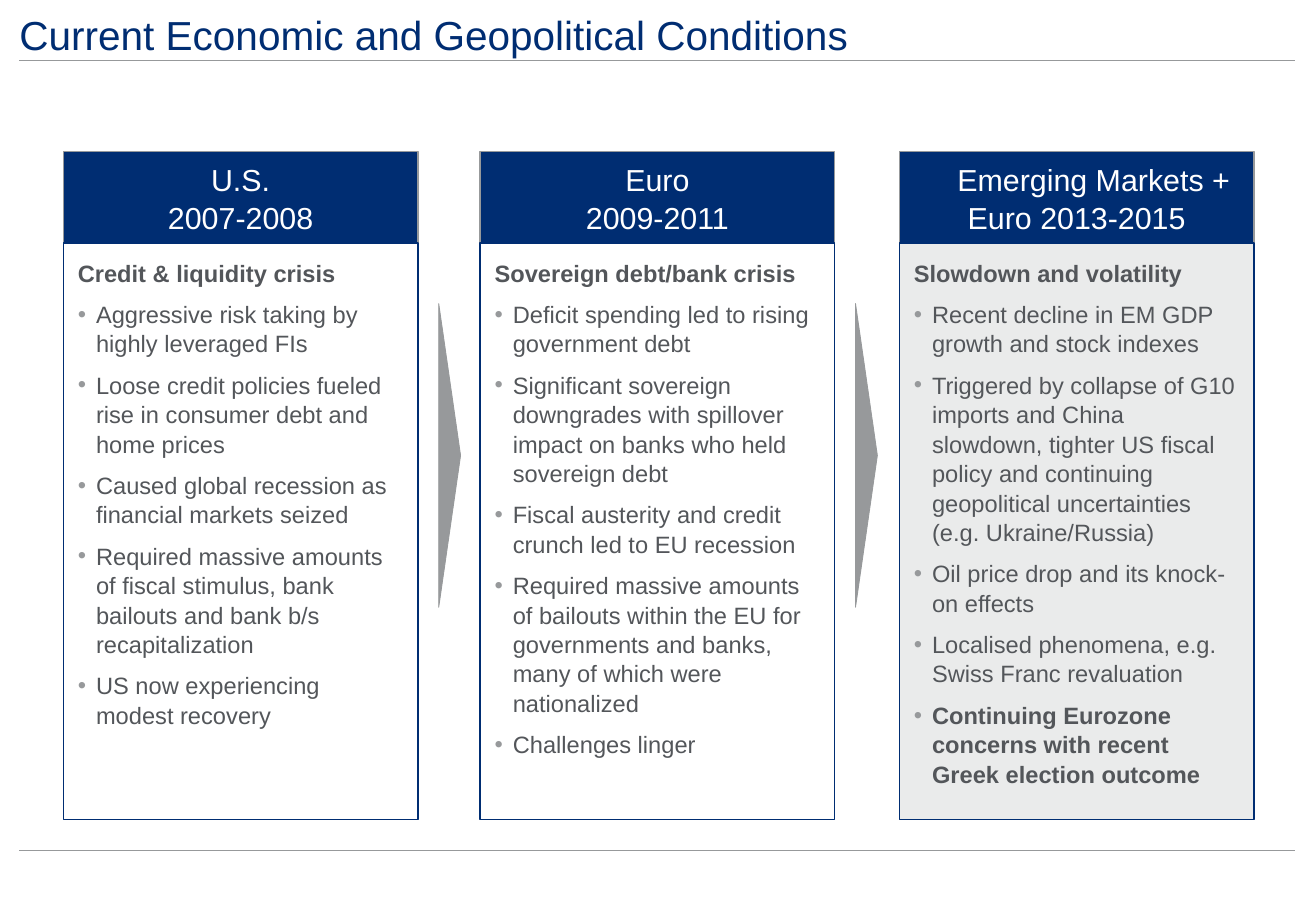
from lxml.etree import SubElement
from pptx import Presentation
from pptx.dml.color import RGBColor
from pptx.enum.shapes import MSO_CONNECTOR, MSO_SHAPE
from pptx.enum.text import MSO_ANCHOR, MSO_AUTO_SIZE, PP_ALIGN
from pptx.oxml.ns import qn
from pptx.util import Inches, Pt

NAVY, GRAY, TEXT, PALE, WHITE = "002D72", "97999B", "53565A", "EAEBEB", "FFFFFF"
COL_W, HEAD_H, BODY_H = 2.92, 0.75, 4.75
ARROW_W, ARROW_H, ARROW_GAP = 2.5, 0.18, 0.26

COLUMNS = [
    (0.52, ["U.S.", "2007-2008"], None, "Credit & liquidity crisis", [
        "Aggressive risk taking by highly leveraged FIs",
        "Loose credit policies fueled rise in consumer debt and home prices",
        "Caused global recession as financial markets seized",
        "Required massive amounts of fiscal stimulus, bank bailouts and bank b/s recapitalization",
        "US now experiencing modest recovery"]),
    (3.95, ["Euro", "2009-2011"], None, "Sovereign debt/bank crisis", [
        "Deficit spending led to rising government debt",
        "Significant sovereign downgrades with spillover impact on banks who held sovereign debt",
        "Fiscal austerity and credit crunch led to EU recession",
        "Required massive amounts of bailouts within the EU for governments and banks, "
        "many of which were nationalized",
        "Challenges linger"]),
    (7.4, ["Emerging Markets + Euro 2013-2015"], PALE, "Slowdown and volatility", [
        "Recent decline in EM GDP growth and stock indexes",
        "Triggered by collapse of G10 imports and China slowdown, tighter US fiscal policy "
        "and continuing geopolitical uncertainties (e.g. Ukraine/Russia)",
        "Oil price drop and its knock-on effects",
        "Localised phenomena, e.g. Swiss Franc revaluation",
        "Continuing Eurozone concerns with recent Greek election outcome"]),
]


def rgb(color):
    return RGBColor.from_string(color)


def style(p, size, color, bold=False):
    for r in p.runs:
        r.font.name = "Arial"
        r.font.size = Pt(size)
        r.font.color.rgb = rgb(color)
        r.font.bold = bold


def add_box(s, kind, x, y, w, h, fill, line, width=0.75):
    sp = s.shapes.add_shape(kind, Inches(x), Inches(y), Inches(w), Inches(h))
    sp.shadow.inherit = False
    if fill:
        sp.fill.solid()
        sp.fill.fore_color.rgb = rgb(fill)
    else:
        sp.fill.background()
    sp.line.color.rgb = rgb(line)
    sp.line.width = Pt(width)
    return sp


def set_frame(tf, anchor, inset):
    tf.word_wrap = True
    tf.auto_size = MSO_AUTO_SIZE.NONE
    tf.vertical_anchor = anchor
    tf.margin_left = tf.margin_right = tf.margin_top = tf.margin_bottom = Inches(inset)


def add_rule(s, x, y, w):
    line = s.shapes.add_connector(
        MSO_CONNECTOR.STRAIGHT, Inches(x), Inches(y), Inches(x + w), Inches(y))
    line.line.color.rgb = rgb(GRAY)
    line.line.width = Pt(0.5)
    SubElement(line._element.spPr, qn("a:effectLst"))


def add_title(s, x, y, w, h):
    sp = s.shapes.title
    sp.left, sp.top, sp.width, sp.height = Inches(x), Inches(y), Inches(w), Inches(h)
    tf = sp.text_frame
    tf.text = "Current Economic and Geopolitical Conditions"
    set_frame(tf, MSO_ANCHOR.TOP, 0)
    tf.paragraphs[0].alignment = PP_ALIGN.LEFT
    style(tf.paragraphs[0], 24, NAVY)


def add_header(s, x, y, w, h, lines):
    tf = add_box(s, MSO_SHAPE.RECTANGLE, x, y, w, h, NAVY, GRAY).text_frame
    set_frame(tf, MSO_ANCHOR.MIDDLE, 0.12)
    tf.text = "\n".join(lines)
    for p in tf.paragraphs:
        p.alignment = PP_ALIGN.CENTER
        p.line_spacing = 1.04
        style(p, 18, WHITE)
    if len(lines) == 1:
        tf.paragraphs[0]._p.get_or_add_pPr().set("indent", str(Inches(0.28)))


def add_bullet(p):
    pPr = p._p.get_or_add_pPr()
    pPr.set("marL", str(Inches(0.15)))
    pPr.set("indent", str(-Inches(0.15)))
    SubElement(SubElement(pPr, qn("a:buClr")), qn("a:srgbClr"), val=GRAY)
    SubElement(pPr, qn("a:buFont"), typeface="Arial")
    SubElement(pPr, qn("a:buChar"), char="•")


def add_body(s, x, y, w, h, fill, heading, points):
    tf = add_box(s, MSO_SHAPE.RECTANGLE, x, y, w, h, fill, NAVY).text_frame
    set_frame(tf, MSO_ANCHOR.TOP, 0.12)
    tf.text = "\n".join([heading] + points)
    for i, p in enumerate(tf.paragraphs):
        p.alignment = PP_ALIGN.LEFT
        p.line_spacing = 1.04
        if i:
            p.level = 1
            p.space_before = Pt(7)
            add_bullet(p)
        style(p, 14, TEXT, bold=i == 0 or (fill == PALE and i == len(points)))


def add_arrow(s, cx, cy):
    sp = add_box(s, MSO_SHAPE.ISOSCELES_TRIANGLE, cx - ARROW_W / 2, cy - ARROW_H / 2,
                 ARROW_W, ARROW_H, GRAY, GRAY, 0.5)
    sp.rotation = 90


def main():
    prs = Presentation()
    prs.slide_width, prs.slide_height = Inches(10.83), Inches(7.5)
    s = prs.slides.add_slide(prs.slide_layouts[5])
    add_title(s, 0.16, 0.08, 10.5, 0.4)
    for y in (0.5, 7):
        add_rule(s, 0.16, y, 10.5)
    top = 1.25
    for x, header, fill, heading, points in COLUMNS:
        add_header(s, x, top, COL_W, HEAD_H, header)
        add_body(s, x, top + HEAD_H, COL_W, BODY_H, fill, heading, points)
    for x, *_ in COLUMNS[:-1]:
        add_arrow(s, x + COL_W + ARROW_GAP, 3.75)
    prs.save("out.pptx")


if __name__ == "__main__":
    main()
